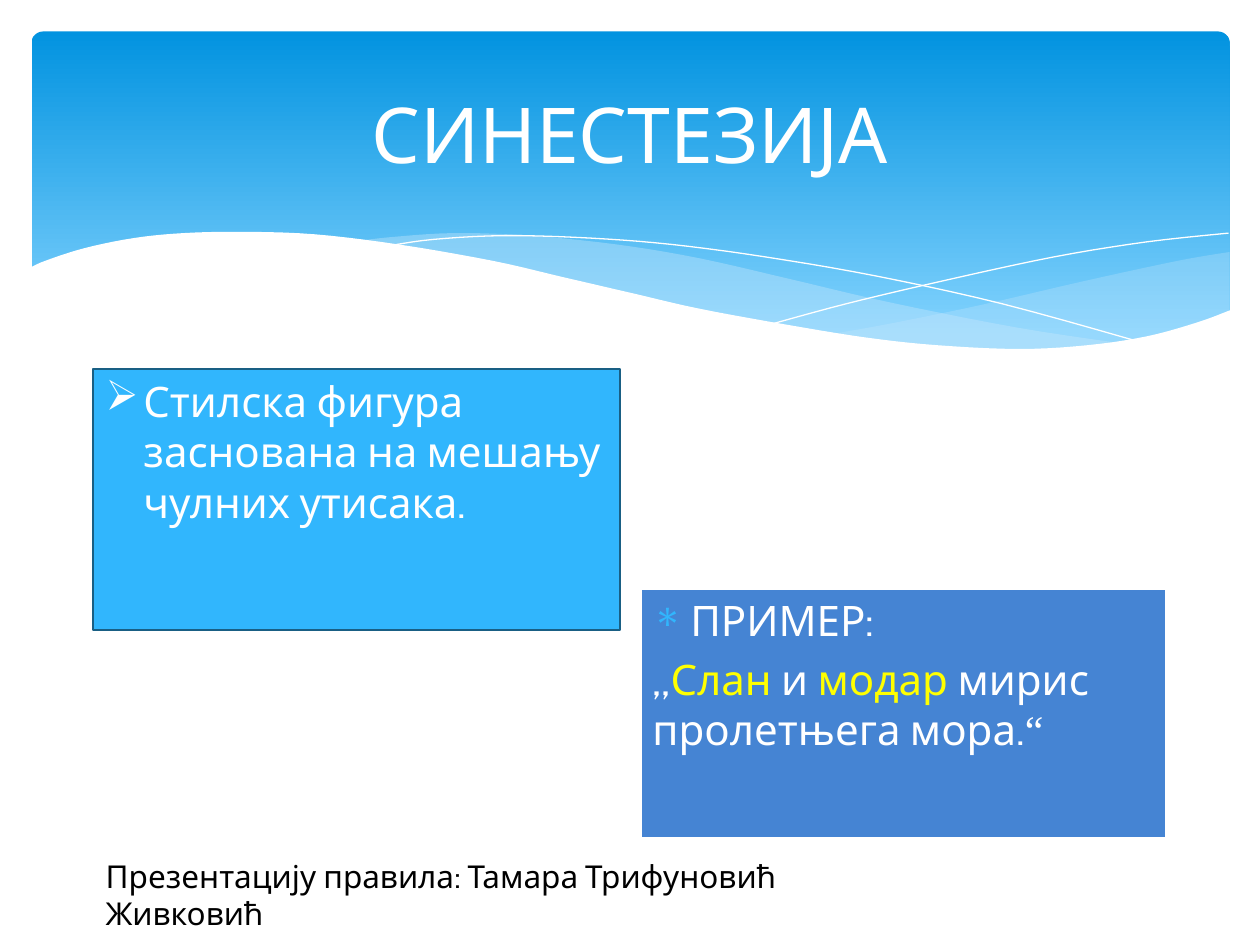
from dataclasses import dataclass

from lxml import etree
from pptx import Presentation
from pptx.dml.color import RGBColor
from pptx.enum.shapes import MSO_SHAPE
from pptx.enum.text import MSO_ANCHOR, PP_ALIGN
from pptx.oxml.ns import qn
from pptx.util import Inches, Pt

ROUNDED = MSO_SHAPE.ROUNDED_RECTANGLE
RECTANGLE = MSO_SHAPE.RECTANGLE
TOP, MIDDLE = MSO_ANCHOR.TOP, MSO_ANCHOR.MIDDLE
LEFT, CENTER = PP_ALIGN.LEFT, PP_ALIGN.CENTER
TITLE_ONLY = 5
CURVE_STEPS = 5


@dataclass(frozen=True)
class Theme:
    """Colours, fonts and type sizes of the deck."""
    sky_top: str = "0293E0"
    sky_bottom: str = "83D3FE"
    veil: str = "C6E7FC"
    white: str = "FFFFFF"
    black: str = "000000"
    bright: str = "31B6FD"
    bright_edge: str = "195F84"
    blue: str = "4584D3"
    accent: str = "FFFF00"
    font: str = "Cabin"
    quote_font: str = "Times New Roman"
    title_size: float = 44
    body_size: float = 24
    credit_size: float = 18
    space_before: float = 4.8


THEME = Theme()

WHITE_WAVE = [
    [(0, .29), (.13, .23), (.44, .13), (.83, .05), (1.23, .01), (1.7, 0), (2.27, .02),
     (2.93, .1), (3.68, .23), (4.24, .36), (4.8, .49), (5.32, .61), (6.03, .74),
     (6.65, .84), (7.21, .9), (7.86, .93), (8.4, .9), (8.87, .83), (9.27, .72), (9.54, .62)],
    [(9.54, 1.45), (0, 1.45)],
]
RIGHT_VEIL = [
    [(9.53, .16), (9.12, .23), (8.38, .39), (7.56, .58), (6.83, .73), (6.38, .81)],
    [(6.38, .81), (6.96, .88), (7.46, .93), (7.91, .94), (8.4, .91), (8.9, .83),
     (9.26, .73), (9.53, .63)],
]
MIDDLE_VEIL = [
    [(8.7, .89), (7.84, .76), (6.83, .56), (6.06, .38), (5.32, .21), (4.66, .1),
     (3.97, .03), (3.38, .01), (2.9, .04), (2.63, .07)],
    [(2.63, .07), (3.19, .15), (3.81, .27), (4.26, .38), (5.07, .56), (5.78, .71),
     (6.42, .82), (6.99, .9), (7.5, .93), (7.95, .94), (8.34, .93), (8.7, .89)],
]
FALLING_LINE = [
    [(2.86, .11), (3.21, .06), (3.78, .03), (4.46, .05), (5.1, .1), (5.85, .2),
     (6.72, .35), (7.72, .57), (8.84, .88)],
]
RISING_LINE = [
    [(5.9, .73), (6.49, .57), (7.25, .39), (8.13, .2), (8.87, .08), (9.52, .01)],
]


def rgb(value):
    """Return a colour from its hex value."""
    return RGBColor.from_string(value)


def inches(*lengths):
    """Turn a box in inches into lengths."""
    return tuple(Inches(length) for length in lengths)


def set_attributes(target, formats):
    """Set each format value on the target."""
    for name, value in formats.items():
        setattr(target, name, value)


def paint(shape, fill=None, line=None, width=0):
    """Give a shape its flat fill and outline."""
    shape.shadow.inherit = False
    if fill:
        shape.fill.solid()
        shape.fill.fore_color.rgb = rgb(fill)
    else:
        shape.fill.background()
    if line:
        shape.line.color.rgb = rgb(line)
        shape.line.width = Pt(width)
    else:
        shape.line.fill.background()


def smooth_edge(knots):
    """Sample a Catmull-Rom curve through the knots."""
    padded = [knots[0], *knots, knots[-1]]
    points = []
    for before, start, end, after in zip(padded, padded[1:], padded[2:], padded[3:]):
        for step in range(CURVE_STEPS):
            t = step / CURVE_STEPS
            points.append(tuple(
                b + ((c - a) * t + (2 * a - 5 * b + 4 * c - d) * t ** 2
                     + (3 * b - a - 3 * c + d) * t ** 3) / 2
                for a, b, c, d in zip(before, start, end, after)))
    return points + [knots[-1]]


def add_wave(page, box, edges, fill=None, line=None, alpha=None):
    """Draw a curved outline inside the box, closed when it is filled."""
    points = [(box[0] + Inches(x), box[1] + Inches(y))
              for edge in edges for x, y in smooth_edge(edge)]
    builder = page.shapes.build_freeform(*points[0])
    builder.add_line_segments(points[1:], close=fill is not None)
    wave = builder.convert_to_shape()
    paint(wave, fill, line)
    if alpha:
        color = wave.element.find(".//" + qn("a:srgbClr"))
        etree.SubElement(color, qn("a:alpha"), val=str(alpha * 1000))


def add_banner(page, box):
    """Draw the gradient banner."""
    banner = page.shapes.add_shape(ROUNDED, *box)
    banner.adjustments[0] = 0.034
    paint(banner)
    banner.fill.gradient()
    banner.fill.gradient_angle = 270
    stops = ((0, THEME.sky_top), (0.9, THEME.sky_bottom))
    for stop, (position, color) in zip(banner.fill.gradient_stops, stops):
        stop.position = position
        stop.color.rgb = rgb(color)


def add_waves(page, box):
    """Layer the veils, hairlines and white wave over the banner's foot."""
    add_wave(page, box, RIGHT_VEIL, fill=THEME.veil, alpha=29)
    add_wave(page, box, MIDDLE_VEIL, fill=THEME.veil, alpha=40)
    for edges in (FALLING_LINE, RISING_LINE):
        add_wave(page, box, edges, line=THEME.white)
    add_wave(page, box, WHITE_WAVE, fill=THEME.white)


def add_span(para, text, size, color, font=THEME.font):
    """Append a formatted span to a paragraph."""
    span = para.add_run()
    span.text = text
    set_attributes(span.font, {"size": Pt(size), "name": font})
    span.font.color.rgb = rgb(color)


def add_bullet(para, symbol, color):
    """Give a paragraph a hanging coloured bullet."""
    properties = para._p.get_or_add_pPr()
    properties.set("marL", str(Inches(0.3)))
    properties.set("indent", str(-Inches(0.3)))
    bullet_color = etree.SubElement(properties, qn("a:buClr"))
    etree.SubElement(bullet_color, qn("a:srgbClr"), val=color)
    etree.SubElement(properties, qn("a:buChar"), char=symbol)


def place_title(page, box, text):
    """Move the title placeholder into the box, in front of the banner."""
    title = page.shapes.title
    set_attributes(title, dict(zip(("left", "top", "width", "height"), box)))
    set_attributes(title.text_frame, {"vertical_anchor": MIDDLE, "word_wrap": True})
    para = title.text_frame.paragraphs[0]
    para.alignment = CENTER
    add_span(para, text, THEME.title_size, THEME.white)
    page.shapes.element.append(title.element)


def add_panel(page, box, colors, paragraphs):
    """Draw a filled panel of paragraphs, each a bullet and its spans."""
    panel = page.shapes.add_shape(RECTANGLE, *box)
    paint(panel, *colors)
    frame = panel.text_frame
    set_attributes(frame, {"vertical_anchor": TOP, "word_wrap": True})
    for index, (bullet, spans) in enumerate(paragraphs):
        para = frame.add_paragraph() if index else frame.paragraphs[0]
        set_attributes(para, {"alignment": LEFT, "space_before": Pt(THEME.space_before)})
        if bullet:
            add_bullet(para, *bullet)
        for text, color, font in spans:
            add_span(para, text, THEME.body_size, color, font)


def add_credit(page, box, text):
    """Write the author line."""
    frame = page.shapes.add_textbox(*box).text_frame
    frame.word_wrap = True
    add_span(frame.paragraphs[0], text, THEME.credit_size, THEME.black)


def main():
    """Build and save the deck."""
    deck = Presentation()
    set_attributes(deck, {"slide_width": Inches(10), "slide_height": Inches(7.5)})
    page = deck.slides.add_slide(deck.slide_layouts[TITLE_ONLY])
    plain, accent = (THEME.white, THEME.font), (THEME.accent, THEME.font)
    add_banner(page, inches(0.25, 0.25, 9.51, 2.7))
    add_waves(page, inches(0.23, 1.84, 9.54, 1.45))
    place_title(page, inches(0.5, 0.37, 9, 1.37), "СИНЕСТЕЗИЈА")
    add_panel(page, inches(0.74, 2.93, 4.18, 2.07), (THEME.bright, THEME.bright_edge, 1.25), [
        (("➢", THEME.white), [("Стилска фигура заснована на мешању чулних утисака.", *plain)]),
    ])
    add_panel(page, inches(5.08, 4.67, 4.18, 1.99), (THEME.blue, THEME.white, 2), [
        (("∗", THEME.bright), [("ПРИМЕР:", *plain)]),
        (None, [(",,", *plain), ("Слан ", *accent), ("и ", *plain), ("модар", *accent),
                (" мирис пролетњега мора.", *plain), ("“", THEME.white, THEME.quote_font)]),
    ])
    add_credit(page, inches(0.74, 6.75, 6.15, 0.4),
               "Презентацију правила: Тамара Трифуновић Живковић")
    deck.save("out.pptx")


if __name__ == "__main__":
    main()
